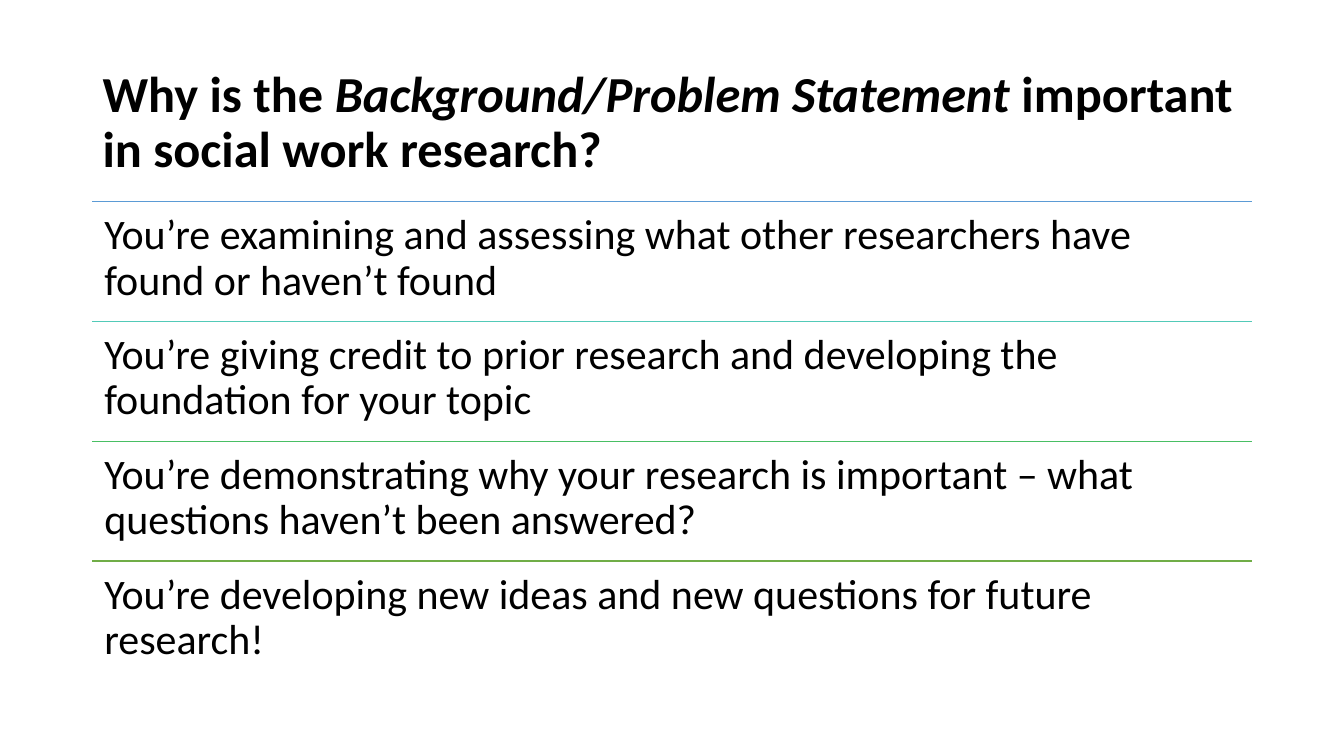
from dataclasses import dataclass

from lxml import etree
from pptx import Presentation
from pptx import util as u
from pptx.dml.color import RGBColor
from pptx.enum import shapes, text
from pptx.oxml import ns

COLOURS = {
    "text": "000000",
    "blue": "5B9BD5",
    "teal": "52CAB8",
    "green": "49BF64",
    "olive": "70AD47",
}
FONT = "Calibri"
LEFT = u.Cm(2.33)
WIDTH = u.Cm(29.21)
REASONS_TOP = u.Cm(5.08)
REASON_HEIGHT = u.Cm(3.02)
REASON_INSET = u.Cm(0.3)


@dataclass(frozen=True)
class Reason:
    wording: str
    colour: str


@dataclass(frozen=True)
class TitlePart:
    wording: str
    italic: bool = False


TITLE = [
    TitlePart("Why is the "),
    TitlePart("Background/Problem Statement ", italic=True),
    TitlePart("important in social work research?"),
]
REASONS = [
    Reason("You’re examining and assessing what other researchers have found or haven’t found", "blue"),
    Reason("You’re giving credit to prior research and developing the foundation for your topic", "teal"),
    Reason("You’re demonstrating why your research is important – what questions haven’t been answered?", "green"),
    Reason("You’re developing new ideas and new questions for future research!", "olive"),
]


def colour(name: str) -> RGBColor:
    return RGBColor.from_string(COLOURS[name])


def format_run(run, size: int) -> None:
    run.font.name = FONT
    run.font.size = u.Pt(size)
    run.font.color.rgb = colour("text")


def format_paragraph(paragraph) -> None:
    paragraph.alignment = text.PP_ALIGN.LEFT
    paragraph.line_spacing = 0.9


def fill_title(shape, parts: list[TitlePart]) -> None:
    shape.left, shape.top = LEFT, u.Cm(1.54)
    shape.width, shape.height = WIDTH, u.Cm(3.16)
    frame = shape.text_frame
    frame.auto_size = text.MSO_AUTO_SIZE.NONE
    frame.vertical_anchor = text.MSO_ANCHOR.MIDDLE
    paragraph = frame.paragraphs[0]
    format_paragraph(paragraph)
    for part in parts:
        run = paragraph.add_run()
        run.text = part.wording
        format_run(run, 36)
        run.font.bold = True
        run.font.italic = part.italic


def draw_rule(slide, top: int, colour_name: str) -> None:
    rule = slide.shapes.add_connector(
        shapes.MSO_CONNECTOR.STRAIGHT, LEFT, top, LEFT + WIDTH, top
    )
    rule.line.color.rgb = colour(colour_name)
    rule.line.width = u.Pt(1)
    etree.SubElement(rule._element.spPr, ns.qn("a:effectLst"))


def draw_reason(slide, reason: Reason, top: int) -> None:
    draw_rule(slide, top, reason.colour)
    box = slide.shapes.add_textbox(LEFT, top, WIDTH, REASON_HEIGHT)
    frame = box.text_frame
    frame.word_wrap = True
    frame.margin_left = frame.margin_right = REASON_INSET
    frame.margin_top = frame.margin_bottom = REASON_INSET
    frame.text = reason.wording
    paragraph = frame.paragraphs[0]
    format_paragraph(paragraph)
    format_run(paragraph.runs[0], 30)


def main() -> None:
    presentation = Presentation()
    presentation.slide_width = u.Cm(33.87)
    presentation.slide_height = u.Cm(19.05)
    slide = presentation.slides.add_slide(presentation.slide_layouts.get_by_name("Title Only"))
    fill_title(slide.shapes.title, TITLE)
    for index, reason in enumerate(REASONS):
        draw_reason(slide, reason, REASONS_TOP + index * REASON_HEIGHT)
    presentation.save("out.pptx")


if __name__ == "__main__":
    main()
